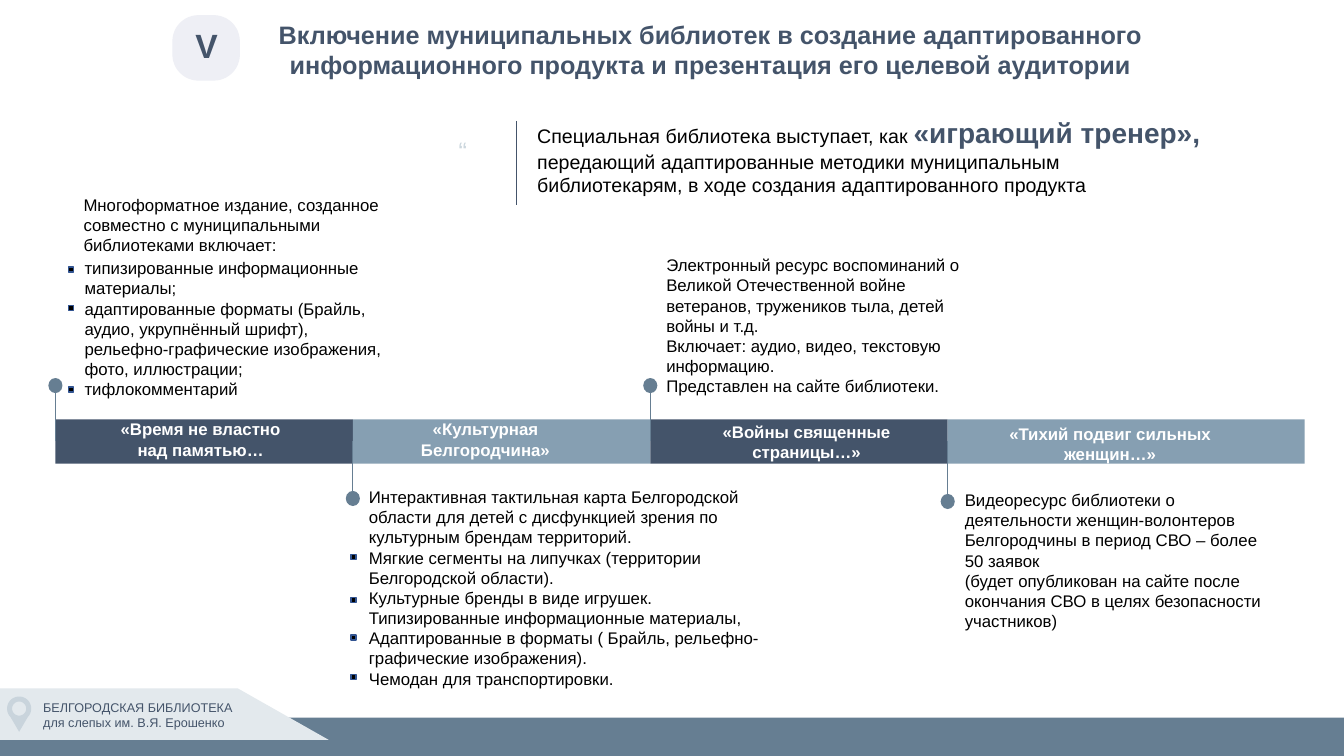
"""Builds the slide on municipal libraries and their adapted information products."""
import math

from lxml import etree
from pptx import Presentation
from pptx import util as u
from pptx.dml.color import RGBColor
from pptx.enum import shapes, text
from pptx.oxml import ns

PX = 9144
COLOURS = {
    "navy": "44546A", "steel": "869FB2", "slate": "667E92", "mist": "E3E9ED",
    "pin": "C9D4DC", "badge": "EEEFF5", "quote": "CCD7DE", "edge": "325491",
    "black": "000000", "white": "FFFFFF",
}
RECT, OVAL = shapes.MSO_SHAPE.RECTANGLE, shapes.MSO_SHAPE.OVAL
CENTRE, MIDDLE = text.PP_ALIGN.CENTER, text.MSO_ANCHOR.MIDDLE


class Sheet:
    """Holds the style and the current slide."""

    def __init__(self, slide, font):
        self.shapes = slide.shapes
        self.font = font

    def colour(self, name):
        return RGBColor.from_string(COLOURS[name])

    def paint(self, shape, fill, edge=None):
        shape.shadow.inherit = False
        shape.fill.solid()
        shape.fill.fore_color.rgb = self.colour(fill)
        if edge:
            shape.line.color.rgb = self.colour(edge)
            shape.line.width = u.Pt(1)
        else:
            shape.line.fill.background()
        return shape

    def shape(self, kind, box, fill, edge=None):
        return self.paint(self.shapes.add_shape(kind, *(n * PX for n in box)), fill, edge)

    def outline(self, contours, fill):
        fine = [[(round(x * 100), round(y * 100)) for x, y in c] for c in contours]
        builder = self.shapes.build_freeform(*fine[0][0], scale=PX / 100)
        for index, contour in enumerate(fine):
            if index:
                builder.move_to(*contour[0])
            builder.add_line_segments(contour[1:], close=True)
        return self.paint(builder.convert_to_shape(), fill)

    def line(self, start, end, colour, width):
        ends = (n * PX for n in (*start, *end))
        line = self.shapes.add_connector(shapes.MSO_CONNECTOR.STRAIGHT, *ends)
        line.line.color.rgb = self.colour(colour)
        line.line.width = u.Pt(width)
        etree.SubElement(line._element.spPr, ns.qn("a:effectLst"))
        return line

    def style(self, run, size, colour, bold=False):
        run.font.name = self.font
        run.font.size = u.Pt(size)
        run.font.bold = bold
        run.font.color.rgb = self.colour(colour)

    def text(self, box, paragraphs, size=12, colour="black", bold=False,
             align=None, anchor=text.MSO_ANCHOR.TOP, spacing=None):
        frame = self.shapes.add_textbox(*(n * PX for n in box)).text_frame
        frame.word_wrap = True
        frame.vertical_anchor = anchor
        frame.text = "\n".join(paragraphs)
        for paragraph in frame.paragraphs:
            paragraph.alignment = align
            paragraph.line_spacing = spacing
            for run in paragraph.runs:
                self.style(run, size, colour, bold)
        return frame


def circle(x, y, radius, start, stop):
    angles = [math.radians(a) for a in range(start, stop + 1, 10)]
    return [(x + radius * math.cos(a), y + radius * math.sin(a)) for a in angles]


def add_heading(sheet):
    sheet.text((260, 33, 889, 32), [
        "Включение муниципальных библиотек в создание адаптированного",
        "информационного продукта и презентация его целевой аудитории",
    ], 18, "navy", True, CENTRE, MIDDLE)
    badge = sheet.shape(shapes.MSO_SHAPE.ROUNDED_RECTANGLE, (171, 15, 67, 65), "badge")
    badge.adjustments[0] = 0.4
    sheet.text((184, 31, 64, 32), ["V"], 24, "navy", True, anchor=MIDDLE, spacing=0.9)


def add_statement(sheet):
    sheet.text((427, 129, 64, 66), ["“"], 18, "quote", align=CENTRE)
    sheet.line((512, 120), (512, 203), "navy", 1)
    statement = sheet.text((523, 110, 690, 91), [
        "Специальная библиотека выступает, как ",
        "передающий адаптированные методики муниципальным",
        "библиотекарям, в ходе создания адаптированного продукта",
    ], 14)
    coach = statement.paragraphs[0].add_run()
    coach.text = "«играющий тренер»,"
    sheet.style(coach, 20, "navy", True)


def add_timeline(sheet):
    step = 295
    milestones = [
        ("navy", step, 375, (97, 411, 204, 50), ["«Время не властно над памятью…"]),
        ("steel", step, 487, (359, 411, 245, 50), ["«Культурная Белгородчина»"]),
        ("navy", step, 375, (703, 413, 194, 50), ["«Войны священные", "страницы…»"]),
        ("steel", 354, 490, (989, 415, 224, 50), ["«Тихий подвиг сильных женщин…»"]),
    ]
    for index, (fill, width, dot_top, label_box, label) in enumerate(milestones):
        left = 55 + index * step
        bar = sheet.shape(RECT, (left, 416, width, 44), fill)
        stem = sheet.line((left, dot_top + 7), (left, 438), "slate", 0.75)
        stem.end_connect(bar, 1)
        sheet.shape(OVAL, (left - 7, dot_top, 14, 15), "slate")
        sheet.text(label_box, label, 12, "white", True, CENTRE)


def add_descriptions(sheet):
    descriptions = [
        ((73, 188, 322, 71), [
            "Многоформатное издание, созданное совместно с муниципальными "
            "библиотеками включает:"]),
        ((74, 251, 315, 151), [
            "типизированные информационные материалы;",
            "адаптированные форматы (Брайль, аудио, укрупнённый шрифт), "
            "рельефно-графические изображения, фото, иллюстрации;",
            "тифлокомментарий"]),
        ((356, 478, 408, 212), [
            "Интерактивная тактильная карта Белгородской области для детей "
            "с дисфункцией зрения по культурным брендам территорий.",
            "Мягкие сегменты на липучках (территории Белгородской области).",
            "Культурные бренды в виде игрушек.",
            "Типизированные информационные материалы,",
            "Адаптированные в форматы ( Брайль, рельефно-графические изображения).",
            "Чемодан для транспортировки."]),
        ((651, 248, 322, 151), [
            "Электронный ресурс воспоминаний о Великой Отечественной войне "
            "ветеранов, тружеников тыла, детей войны и т.д.",
            "Включает: аудио, видео, текстовую информацию.",
            "Представлен на сайте библиотеки."]),
        ((947, 481, 321, 151), [
            "Видеоресурс библиотеки о деятельности женщин-волонтеров "
            "Белгородчины в период СВО – более 50 заявок",
            "(будет опубликован на сайте после окончания СВО в целях "
            "безопасности участников)"]),
    ]
    for box, paragraphs in descriptions:
        sheet.text(box, paragraphs)
    for left, tops in ((68, (265, 303, 384)), (348, (550, 593, 630, 669))):
        for top in tops:
            sheet.shape(RECT, (left, top, 5, 5), "black", "edge")


def add_footer(sheet):
    sheet.shape(RECT, (0, 712, 1333, 38), "slate")
    sheet.outline([[(0, 683), (0, 734), (326, 734), (236, 683)]], "mist")
    drop = circle(19, 703, 12, 135, 405) + [(19, 726)]
    sheet.outline([drop, circle(19, 703, 7, 0, 350)], "pin")
    sheet.text((33, 689, 232, 40), [
        "БЕЛГОРОДСКАЯ БИБЛИОТЕКА", "для слепых им. В.Я. Ерошенко"], 9, "navy")


def main():
    deck = Presentation()
    deck.slide_width, deck.slide_height = 1333 * PX, 750 * PX
    sheet = Sheet(deck.slides.add_slide(deck.slide_layouts[6]), "Arial")
    add_heading(sheet)
    add_footer(sheet)
    add_statement(sheet)
    add_timeline(sheet)
    add_descriptions(sheet)
    deck.save("out.pptx")


if __name__ == "__main__":
    main()
